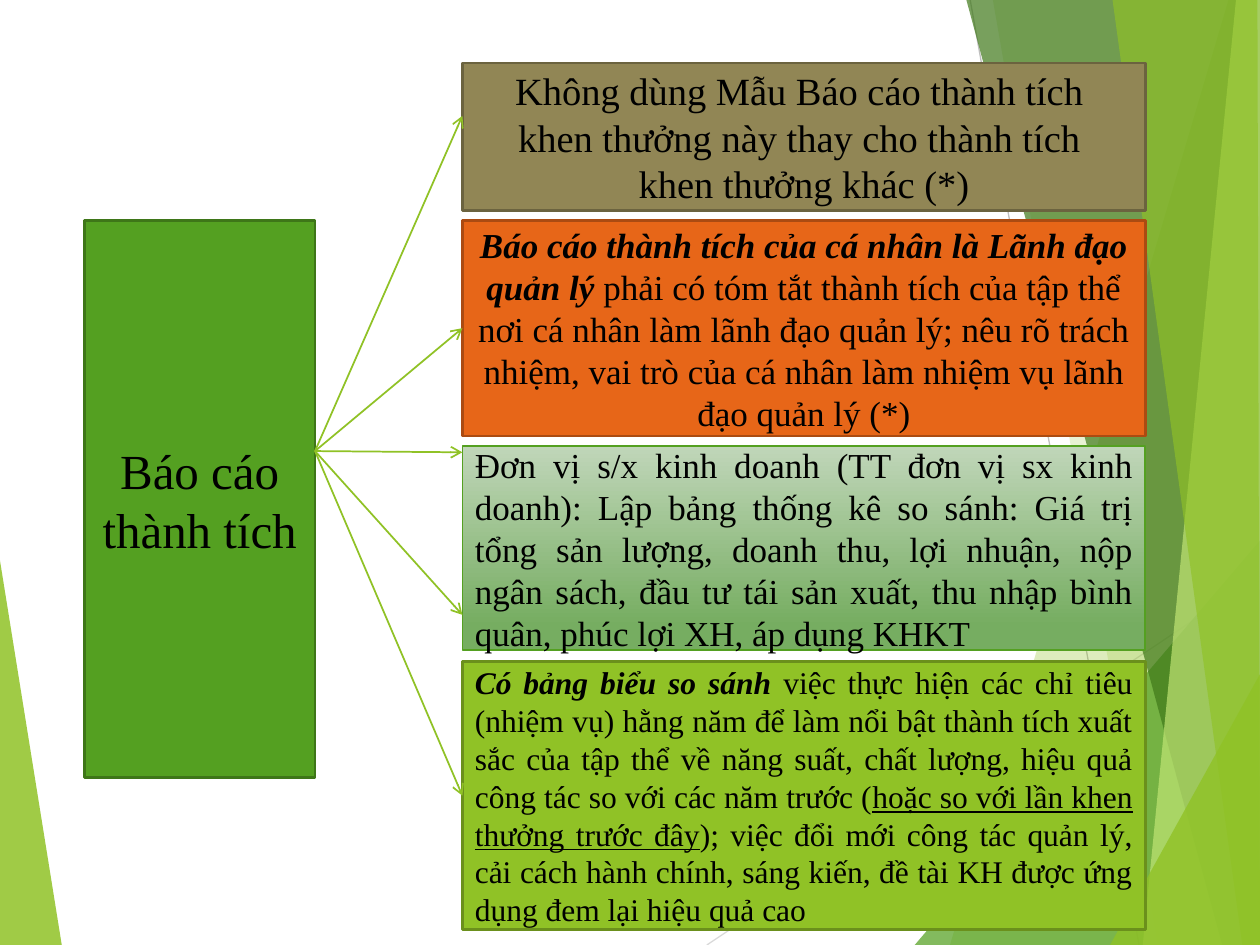
from dataclasses import dataclass
from lxml.etree import SubElement
from pptx import Presentation
from pptx.dml.color import RGBColor
from pptx.enum.shapes import MSO_CONNECTOR, MSO_SHAPE
from pptx.enum.text import MSO_ANCHOR, PP_ALIGN
from pptx.oxml.ns import qn
from pptx.util import Inches, Pt


@dataclass(frozen=True)
class Theme:
    font: str = "Times New Roman"
    ink: str = "000000"
    lime: str = "90C226"
    green: str = "54A021"
    dark: str = "3F7819"
    pale: str = "C0E474"
    sizes: tuple = (28, 22, 20, 18)
    fades: tuple = ((0, "C0D6B9"), (0.88, "76AD61"))


T = Theme()
WIDE, HIGH = 10, 7.5
LEFT, JOIN = PP_ALIGN.CENTER, PP_ALIGN.JUSTIFY

# Background facets: corner points, colour, opacity in percent
FACETS = [
    ([(0, 4.45), (0.49, 7.5), (0, 7.5)], T.lime, 85),
    ([(9.75, 0), (7.54, 7.5), (10, 7.5), (10, 0)], T.lime, 30),
    ([(7.88, 0), (9.19, 7.5), (10, 7.5), (10, 0)], T.lime, 20),
    ([(7.26, 7.5), (10, 4.29), (10, 7.5)], T.green, 72),
    ([(7.67, 0), (9.7, 7.5), (10, 7.5), (10, 0)], T.dark, 70),
    ([(9.81, 0), (9.07, 7.5), (10, 7.5), (10, 0)], T.pale, 70),
    ([(8.83, 0), (9.86, 7.5), (10, 7.5), (9.98, 0)], T.lime, 65),
    ([(8.81, 7.5), (10, 5.35), (10, 7.5)], T.lime, 80),
]

# Cards: top, height, fill, line, line width, text size, align, paragraphs of (text, style)
CARDS = [
    (0.5, 1.17, "918655", "6B633F", 1.5, T.sizes[1], PP_ALIGN.CENTER,
     [[("Không dùng Mẫu Báo cáo thành tích ", "")],
      [("khen thưởng này thay cho thành tích ", "")],
      [("khen thưởng khác (*)", "")]]),
    (1.75, 1.71, "E76618", "AB4B12", 1.5, T.sizes[2], PP_ALIGN.CENTER,
     [[("Báo cáo thành tích của cá nhân là Lãnh đạo quản lý ", "bi"),
       ("phải có tóm tắt thành tích của tập thể nơi cá nhân làm lãnh đạo quản lý; "
        "nêu rõ trách nhiệm, vai trò của cá nhân làm nhiệm vụ lãnh đạo quản lý (*)", "")]]),
    (3.54, 1.62, T.fades, T.green, 1, T.sizes[2], JOIN,
     [[("Đơn vị s/x kinh doanh (TT đơn vị sx kinh doanh): Lập bảng thống kê so sánh: "
        "Giá trị tổng sản lượng, doanh thu, lợi nhuận, nộp ngân sách, đầu tư tái sản xuất, "
        "thu nhập bình quân, phúc lợi XH, áp dụng KHKT ", "")]]),
    (5.25, 2.13, T.lime, "6B901C", 1.5, T.sizes[3], JOIN,
     [[("Có bảng biểu so sánh ", "bi"),
       ("việc thực hiện các chỉ tiêu (nhiệm vụ) hằng năm để làm nổi bật thành tích xuất sắc "
        "của tập thể về năng suất, chất lượng, hiệu quả công tác so với các năm trước (", ""),
       ("hoặc so với lần khen thưởng trước đây", "u"),
       ("); việc đổi mới công tác quản lý, cải cách hành chính, sáng kiến, đề tài KH "
        "được ứng dụng đem lại hiệu quả cao", "")]]),
]

# Arrow ends: card number, height on the slide (None joins the side's middle)
ENDS = [(0, 0.92), (1, None), (2, 3.59), (2, 4.88), (3, None)]


def paint(shape, fill, alpha=100):
    """Fill with one colour, or with a downward fade of two stops."""
    shape.shadow.inherit = False
    if isinstance(fill, str):
        shape.fill.solid()
        shape.fill.fore_color.rgb = RGBColor.from_string(fill)
    else:
        shape.fill.gradient()
        shape.fill.gradient_angle = 270
        for stop, (place, tone) in zip(shape.fill.gradient_stops, fill):
            stop.position = place
            stop.color.rgb = RGBColor.from_string(tone)
    if alpha < 100:
        tone = shape.element.spPr.find(qn("a:solidFill"))[0]
        SubElement(tone, qn("a:alpha"), val=str(alpha * 1000))


def write(para, text, size, style="", color=T.ink):
    """Add one run; style holds b, i and u flags."""
    run = para.add_run()
    run.text = text
    font = run.font
    font.name, font.size = T.font, Pt(size)
    font.bold, font.italic, font.underline = ("b" in style, "i" in style, "u" in style)
    font.color.rgb = RGBColor.from_string(color)


def stroke(slide, start, end, color, width, arrow=False):
    line = slide.shapes.add_connector(
        MSO_CONNECTOR.STRAIGHT, *(Inches(v) for v in (*start, *end)))
    line.line.color.rgb = RGBColor.from_string(color)
    line.line.width = Pt(width)
    props = line.element.spPr
    if arrow:
        SubElement(props.find(qn("a:ln")), qn("a:tailEnd"), type="arrow")
    SubElement(props, qn("a:effectLst"))
    return line


def card(slide, box, fill, edge, width, size, align, paras):
    shape = slide.shapes.add_shape(MSO_SHAPE.RECTANGLE, *(Inches(v) for v in box))
    paint(shape, fill)
    shape.line.color.rgb = RGBColor.from_string(edge)
    shape.line.width = Pt(width)
    frame = shape.text_frame
    frame.word_wrap = True
    frame.vertical_anchor = MSO_ANCHOR.MIDDLE
    for n, runs in enumerate(paras):
        para = frame.paragraphs[0] if n == 0 else frame.add_paragraph()
        para.alignment = align
        for text, style in runs:
            write(para, text, size, style=style)
    return shape


def backdrop(slide, box):
    """Thin rules and translucent facets."""
    x, y, w, h = box
    stroke(slide, (x + 5.61, y + h), (x + w, y + 4.57), "D9D9D9", 0.75)
    stroke(slide, (x + 7.7, y), (x + 9.04, y + h), "BFBFBF", 0.75)
    for points, color, alpha in FACETS:
        spots = [(Inches(x + a), Inches(y + b)) for a, b in points]
        form = slide.shapes.build_freeform(*spots[0])
        form.add_line_segments(spots[1:], close=True)
        facet = form.convert_to_shape()
        paint(facet, color, alpha)
        facet.line.fill.background()


def diagram(slide, box):
    """One topic on the left, with arrows to the cards on the right."""
    x, y, w, h = box
    wide, gap = 1.83, 3
    card(slide, (x, y + 1.25, wide, 4.42), T.green, "3E7618", 1.5, T.sizes[0],
         PP_ALIGN.CENTER, [[("Báo cáo thành tích", "")]])
    cards = [card(slide, (x + gap, y + top - 0.5, w - gap, high), *look)
             for top, high, *look in CARDS]
    for n, level in ENDS:
        top, high = CARDS[n][:2]
        goal = top + high / 2 if level is None else level
        line = stroke(slide, (x + wide, y + 3.08), (x + gap, y + goal - 0.5),
                      T.lime, 1, arrow=True)
        if level is None:
            line.end_connect(cards[n], 1)


def main():
    deck = Presentation()
    deck.slide_width, deck.slide_height = Inches(WIDE), Inches(HIGH)
    slide = deck.slides.add_slide(deck.slide_layouts[6])
    backdrop(slide, (0, 0, WIDE, HIGH))
    diagram(slide, (0.67, 0.5, 8.42, 6.88))
    deck.save("out.pptx")


if __name__ == "__main__":
    main()
